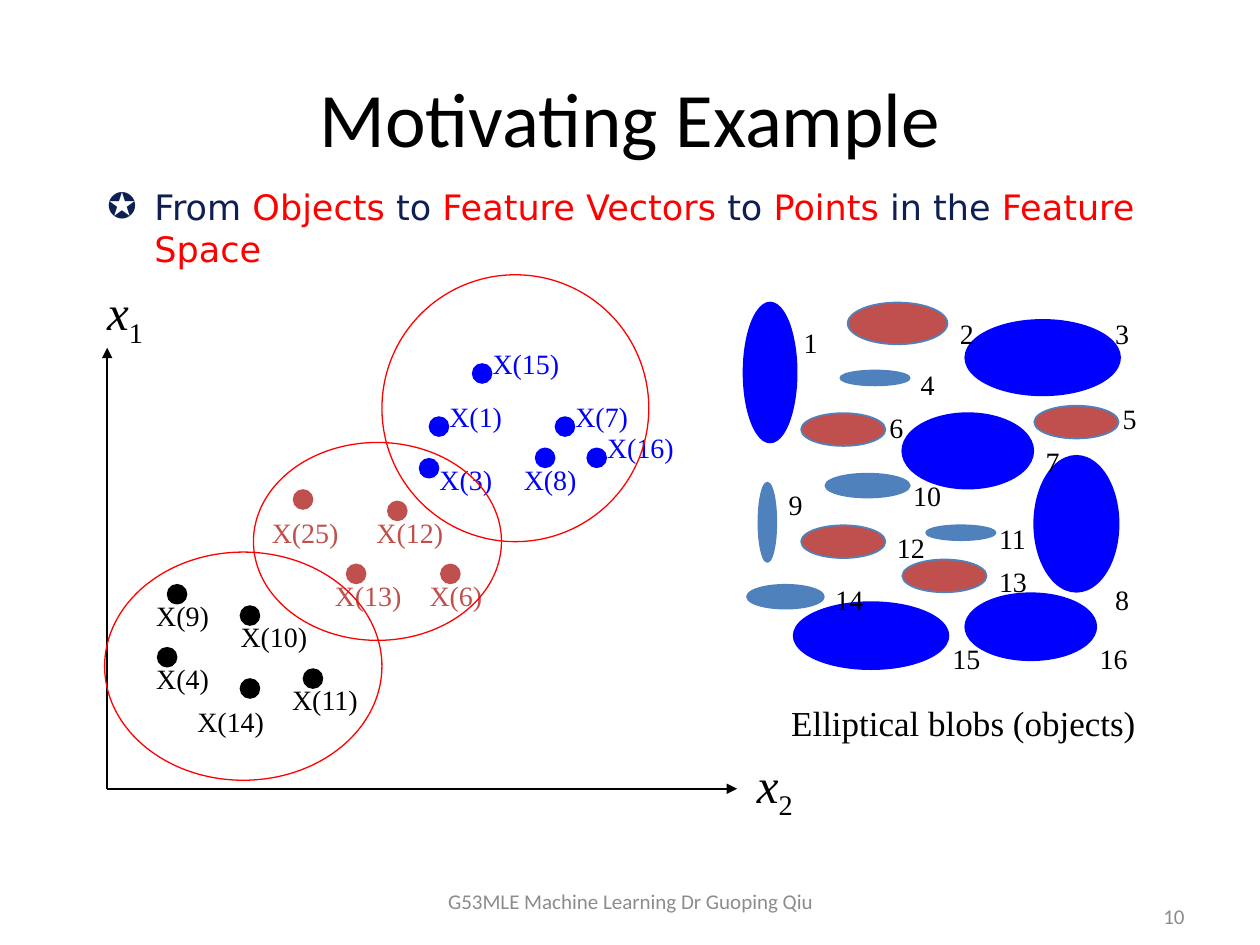
import lxml.etree
import pptx
import pptx.dml.color
import pptx.enum.shapes
import pptx.enum.text
import pptx.oxml.ns
import pptx.util

Cm, Pt = pptx.util.Cm, pptx.util.Pt
hex_color = pptx.dml.color.RGBColor.from_string
qn = pptx.oxml.ns.qn
PP_ALIGN = pptx.enum.text.PP_ALIGN
MIDDLE = pptx.enum.text.MSO_ANCHOR.MIDDLE
NAVY, RED, BLUE, BRICK, STEEL, BLACK, GREY = (
    "0E1F54", "FF0000", "0000FF", "C0504D", "4F81BD", "000000", "8C8C8C")
SERIF = "Times New Roman"


def add_text(shapes, words, box, size, color, font=SERIF, wrap=False):
    label = shapes.add_textbox(*map(Cm, box))
    label.text_frame.word_wrap = wrap
    label.text_frame.text = words
    run = label.text_frame.paragraphs[0].runs[0]
    run.font.size, run.font.name = Pt(size), font
    run.font.color.rgb = hex_color(color)
    return label


def add_ellipse(shapes, box, fill, outline, weight=1):
    oval = shapes.add_shape(pptx.enum.shapes.MSO_SHAPE.OVAL, *map(Cm, box))
    oval.shadow.inherit = False
    if fill:
        oval.fill.solid()
        oval.fill.fore_color.rgb = hex_color(fill)
    else:
        oval.fill.background()
    oval.line.color.rgb = hex_color(outline)
    oval.line.width = Pt(weight)


deck = pptx.Presentation()
deck.slide_width, deck.slide_height = Cm(25.4), Cm(19.05)
slide = deck.slides.add_slide(deck.slide_layouts[1])

title = slide.shapes.title
title.left, title.top, title.width, title.height = map(Cm, (1.27, 0.76, 22.86, 3.18))
title.text_frame.text = "Motivating Example"
title_font = title.text_frame.paragraphs[0].runs[0].font
title_font.size, title_font.name = Pt(44), "Calibri"
title_font.color.rgb = hex_color(BLACK)

topic = slide.placeholders[1]
topic.left, topic.top, topic.width, topic.height = map(Cm, (1.91, 3.61, 21.59, 13.34))
topic_line = topic.text_frame.paragraphs[0]
topic_line.space_before = Pt(4)
phrases = ["From ", "Objects", " to ", "Feature Vectors", " to ", "Points", " in the ", "Feature Space"]
for index, phrase in enumerate(phrases):
    run = topic_line.add_run()
    run.text = phrase
    run.font.size, run.font.name = Pt(20), "DejaVu Sans"
    run.font.color.rgb = hex_color(RED if index % 2 else NAVY)
indents = topic_line._p.get_or_add_pPr()
indents.set("marL", str(Cm(0.95)))
indents.set("indent", str(Cm(-0.95)))
bullet_color = lxml.etree.SubElement(indents, qn("a:buClr"))
lxml.etree.SubElement(bullet_color, qn("a:srgbClr"), val=NAVY)
lxml.etree.SubElement(indents, qn("a:buChar"), char="✪")

blobs = [
    (BRICK, STEEL, [(17.09, 6.1, 2.01, 0.84), (16.15, 8.33, 1.7, 0.66), (16.15, 10.59, 1.7, 0.66),
                    (20.85, 8.18, 1.7, 0.66), (18.19, 11.28, 1.7, 0.66)]),
    (STEEL, STEEL, [(18.67, 10.59, 1.4, 0.3), (15.06, 11.79, 1.55, 0.48), (15.29, 9.73, 0.36, 1.6),
                    (16.64, 9.55, 1.7, 0.48), (16.94, 7.47, 1.4, 0.3)]),
    (BLUE, BLUE, [(14.99, 6.1, 1.07, 2.82), (19.46, 11.96, 2.64, 1.35), (19.46, 6.45, 3.12, 1.52),
                  (16, 12.14, 3.12, 1.35), (18.19, 8.33, 2.64, 1.52), (20.85, 9.19, 1.7, 2.74)]),
]
blob_numbers = [
    (15.95, 6.43), (19.1, 6.25), (22.23, 6.25), (18.31, 7.29), (22.38, 7.98), (17.68, 8.15),
    (20.83, 8.84), (22.23, 11.61), (15.65, 9.7), (18.16, 9.53), (19.89, 10.39), (17.83, 10.57),
    (19.89, 11.25), (16.59, 11.61), (18.95, 12.8), (21.92, 12.8),
]
objects = slide.shapes.add_group_shape().shapes
for fill, outline, boxes in blobs:
    for box in boxes:
        add_ellipse(objects, box, fill, outline)
add_text(objects, "Elliptical blobs (objects)", (15.7, 14.02, 7.7, 1.09), 20, BLACK, wrap=True)
for number, (left, top) in enumerate(blob_numbers, 1):
    digits = str(number)
    add_text(objects, digits, (left, top, 0.51 + 0.28 * len(digits), 0.93), 16, BLACK)

axes = slide.shapes.add_group_shape().shapes
for end_x, end_y in [(2.16, 7.01), (14.86, 15.9)]:
    axis = axes.add_connector(pptx.enum.shapes.MSO_CONNECTOR.STRAIGHT,
                              *map(Cm, (2.16, 15.9, end_x, end_y)))
    axis.line.color.rgb = hex_color(BLACK)
    axis.line.width = Pt(1)
    lxml.etree.SubElement(axis.line._get_or_add_ln(), qn("a:tailEnd"), type="triangle")
    lxml.etree.SubElement(axis.element.spPr, qn("a:effectLst"))
for subscript, left, top in [("1", 1.91, 5.56), ("2", 15.01, 15.09)]:
    axis_name = add_text(axes, "x", (left, top, 1.27, 1.42), 28, BLACK).text_frame.paragraphs[0]
    axis_name.runs[0].font.italic = True
    run = axis_name.add_run()
    run.text = subscript
    run.font.size, run.font.name = Pt(28), SERIF
    run.font.color.rgb = hex_color(BLACK)
    run._r.get_or_add_rPr().set("baseline", "-25000")

clusters = [
    (BLUE, (7.7, 5.54, 5.38, 5.38), [
        (1, 8.81, 7.92, 8.66, 8.41), (3, 8.61, 9.19, 8.46, 9.25), (7, 11.35, 7.92, 11.2, 8.41),
        (8, 10.31, 9.19, 10.8, 9.04), (15, 9.68, 6.86, 9.53, 7.34), (16, 11.99, 8.56, 11.84, 9.04)]),
    (BRICK, (5.11, 8.92, 5, 3.99), [
        (25, 5.23, 10.26, 5.92, 9.88), (6, 8.41, 11.53, 8.89, 11.38),
        (12, 7.34, 10.26, 7.82, 10.11), (13, 6.5, 11.53, 6.99, 11.38)]),
    (BLACK, (2.11, 11.13, 5.59, 4.6), [
        (4, 2.9, 13.21, 3.18, 13.06), (14, 3.73, 14.07, 4.85, 13.69), (9, 2.9, 11.94, 3.38, 11.79),
        (11, 5.64, 13.64, 6.12, 13.49), (10, 4.6, 12.37, 4.85, 12.22)]),
]
for color, boundary, points in clusters:
    for number, left, top, dot_left, dot_top in points:
        name = f"X({number})"
        add_text(slide.shapes, name, (left, top, 0.45 + 0.28 * len(name), 0.93), 16, color)
        add_ellipse(slide.shapes, (dot_left, dot_top, 0.38, 0.38), color, color)
    add_ellipse(slide.shapes, boundary, None, RED, 0.75)

footer = add_text(slide.shapes, "G53MLE Machine Learning Dr Guoping Qiu",
                  (8.69, 17.65, 8.05, 1.02), 12, GREY, "Calibri", True)
page = add_text(slide.shapes, "10", (18.21, 17.65, 5.92, 1.02), 12, GREY, "Calibri", True)
page.text_frame.margin_top = Cm(0.74)
for note, align in [(footer, PP_ALIGN.CENTER), (page, PP_ALIGN.RIGHT)]:
    note.text_frame.vertical_anchor = MIDDLE
    note.text_frame.paragraphs[0].alignment = align

deck.save("out.pptx")
